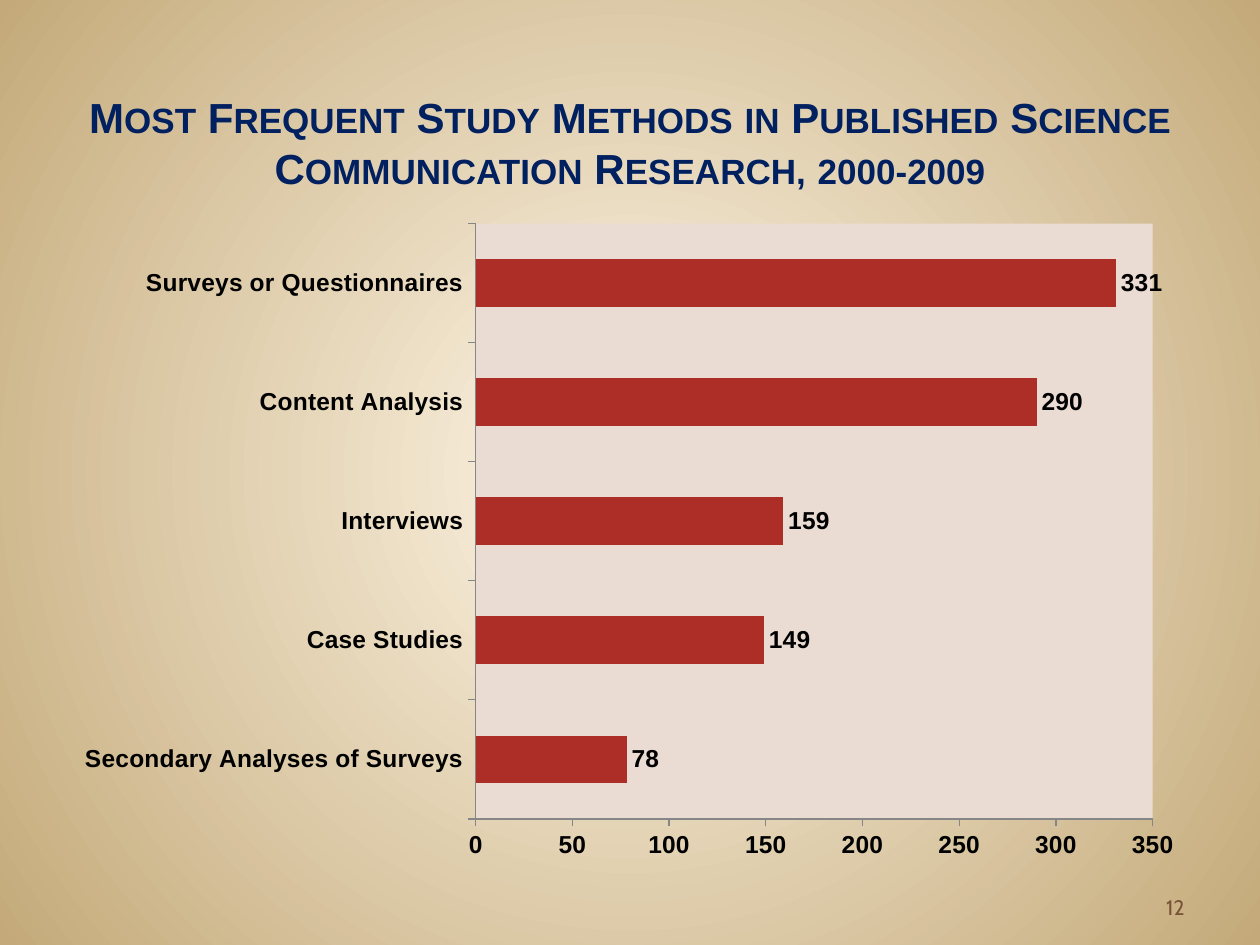
import pptx
import pptx.chart.data
import pptx.dml.color
import pptx.enum.chart
import pptx.enum.text
import pptx.oxml
import pptx.oxml.ns
import pptx.util
from pptx.util import Inches

COLORS = {
    "inner": "FFF7E8", "outer": "C4AA7A", "title": "002060", "plot": "EADCD2",
    "bar": "AD2E27", "text": "000000", "axis": "868686", "page": "795339",
}
TITLE = "Most Frequent Study Methods in Published Science Communication Research, 2000-2009"
DATA = {
    "Secondary Analyses of Surveys": 78,
    "Case Studies": 149,
    "Interviews": 159,
    "Content Analysis": 290,
    "Surveys or Questionnaires": 331,
}
NS = pptx.oxml.ns.nsdecls("a", "c")


def color(key):
    return pptx.dml.color.RGBColor.from_string(COLORS[key])


def style(font, size, key, name="Arial", bold=True):
    font.size, font.name, font.bold = pptx.util.Pt(size), name, bold
    font.color.rgb = color(key)


def place(shape, left, top, width, height):
    shape.left, shape.top = Inches(left), Inches(top)
    shape.width, shape.height = Inches(width), Inches(height)


def add_back(slide):
    fill = slide.background.fill
    fill.gradient()
    for stop, key, pos in zip(fill.gradient_stops, ("inner", "outer"), (0, 1)):
        stop.color.rgb = color(key)
        stop.position = pos
    # Radial spread from the centre
    lin = slide.element.find(".//" + pptx.oxml.ns.qn("a:lin"))
    lin.getparent().replace(lin, pptx.oxml.parse_xml(
        f'<a:path {NS} path="circle">'
        '<a:fillToRect l="50000" t="50000" r="50000" b="50000"/></a:path>'))


def add_title(slide):
    title = slide.shapes.title
    place(title, 0.5, 0.33, 9, 1.25)
    frame = title.text_frame
    frame.vertical_anchor = pptx.enum.text.MSO_ANCHOR.BOTTOM
    para = frame.paragraphs[0]
    para.alignment = pptx.enum.text.PP_ALIGN.CENTER
    style(para.font, 20, "title")
    # Capitals are large, the other letters are smaller capitals
    for i, word in enumerate(TITLE.split()):
        lead = " " if i else ""
        cut = 1 if word[0].isupper() else 0
        for text, size in ((lead + word[:cut], 24), (word[cut:].upper(), 20)):
            if text:
                run = para.add_run()
                run.text = text
                run.font.size = pptx.util.Pt(size)


def style_axis(axis):
    axis.has_major_gridlines = False
    axis.major_tick_mark = pptx.enum.chart.XL_TICK_MARK.OUTSIDE
    axis.format.line.color.rgb = color("axis")
    axis.format.line.width = pptx.util.Pt(0.75)
    style(axis.tick_labels.font, 14, "text")


def set_plot(chart):
    area = chart.plots[0]._element.getparent()
    old = area.find(pptx.oxml.ns.qn("c:layout"))
    if old is not None:
        area.remove(old)
    box = {"x": 0.364, "y": 0.02, "w": 0.597, "h": 0.9}
    size = "".join(f'<c:{k} val="{v}"/>' for k, v in box.items())
    area.insert(0, pptx.oxml.parse_xml(
        f'<c:layout {NS}><c:manualLayout><c:layoutTarget val="inner"/>'
        '<c:xMode val="edge"/><c:yMode val="edge"/>'
        f'{size}</c:manualLayout></c:layout>'))
    area.append(pptx.oxml.parse_xml(
        f'<c:spPr {NS}><a:solidFill><a:srgbClr val="{COLORS["plot"]}"/>'
        '</a:solidFill></c:spPr>'))


def add_bars(slide):
    data = pptx.chart.data.CategoryChartData()
    data.categories = list(DATA)
    data.add_series("Series 1", list(DATA.values()))
    chart = slide.shapes.add_chart(
        pptx.enum.chart.XL_CHART_TYPE.BAR_CLUSTERED,
        Inches(0.5), Inches(1.67), Inches(9), Inches(5.25), data).chart
    chart.has_legend = chart.has_title = False
    style(chart.font, 18, "text", "Cabin", False)
    for axis in (chart.category_axis, chart.value_axis):
        style_axis(axis)
    scale = chart.value_axis
    scale.minimum_scale, scale.maximum_scale, scale.major_unit = 0, 350, 50

    # Bars and their values
    plot = chart.plots[0]
    plot.gap_width = 150
    plot.vary_by_categories = False
    bars = plot.series[0]
    bars.format.fill.solid()
    bars.format.fill.fore_color.rgb = color("bar")
    labels = bars.data_labels
    labels.show_value = True
    labels.position = pptx.enum.chart.XL_LABEL_POSITION.OUTSIDE_END
    style(labels.font, 14, "text")
    set_plot(chart)


def add_page(slide, text):
    box = slide.shapes.add_textbox(
        Inches(7.17), Inches(6.83), Inches(2.33), Inches(0.52))
    frame = box.text_frame
    frame.word_wrap = True
    frame.vertical_anchor = pptx.enum.text.MSO_ANCHOR.BOTTOM
    para = frame.paragraphs[0]
    para.text = text
    para.alignment = pptx.enum.text.PP_ALIGN.RIGHT
    style(para.font, 12, "page", "Cabin", False)


def main():
    deck = pptx.Presentation()
    deck.slide_width, deck.slide_height = Inches(10), Inches(7.5)
    slide = deck.slides.add_slide(deck.slide_layouts[5])
    add_back(slide)
    add_title(slide)
    add_bars(slide)
    add_page(slide, "12")
    deck.save("out.pptx")


if __name__ == "__main__":
    main()
